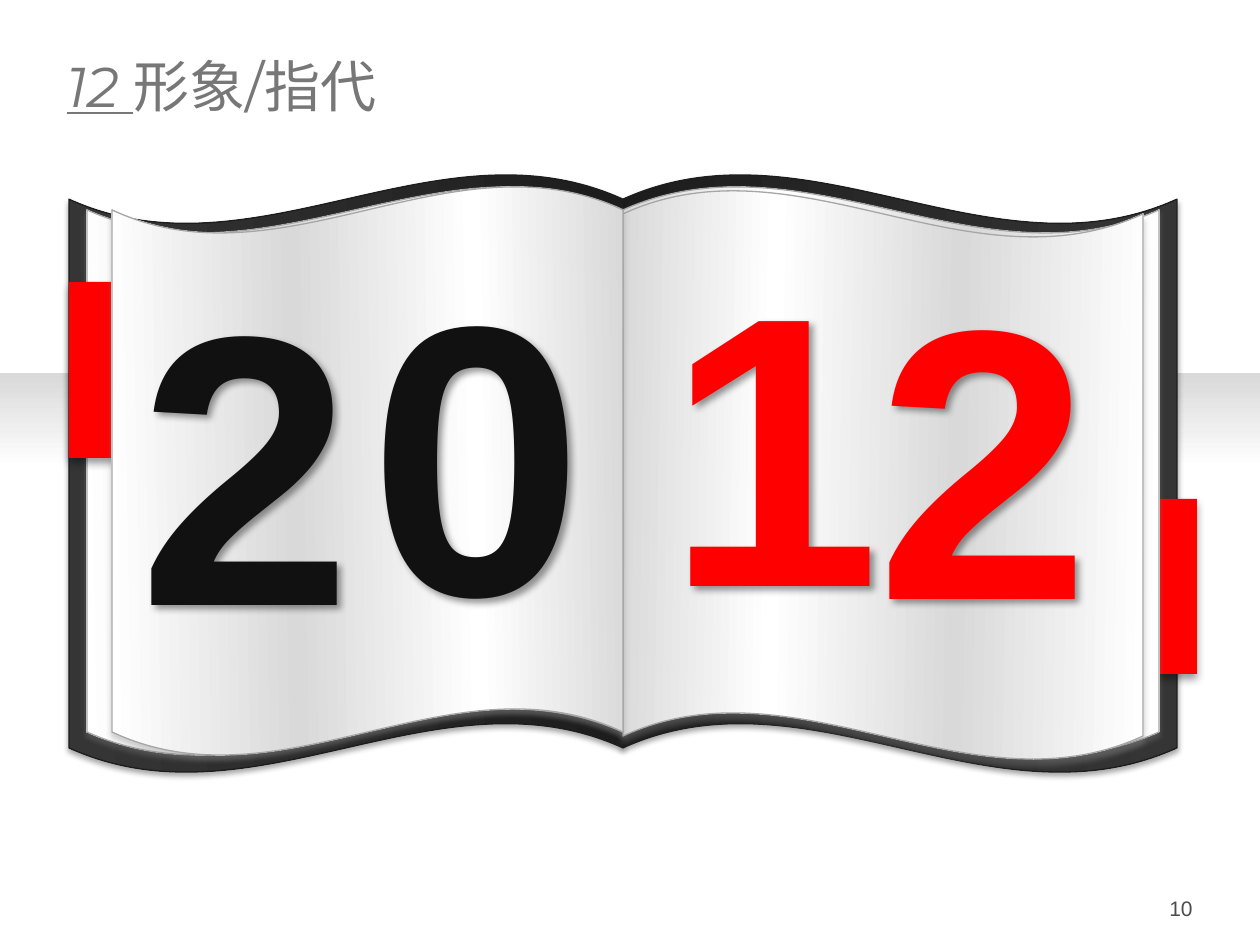
from lxml import etree
from pptx import Presentation
from pptx.dml.color import RGBColor
from pptx.enum.shapes import MSO_SHAPE
from pptx.enum.text import MSO_ANCHOR, PP_ALIGN
from pptx.oxml import parse_xml
from pptx.oxml.ns import nsdecls, qn
from pptx.util import Pt

RECT, WAVE = MSO_SHAPE.RECTANGLE, MSO_SHAPE.WAVE
LEFT, RIGHT = PP_ALIGN.LEFT, PP_ALIGN.RIGHT
TOP, MIDDLE = MSO_ANCHOR.TOP, MSO_ANCHOR.MIDDLE
PX = 914400 / 126
HEX = {
    "white": "FFFFFF", "shade": "D9D9D9", "edge": "A6A6A6", "dark": "1D1D1D",
    "cover": "353535", "red": "FF0000", "ink": "111111", "title": "777777",
    "number": "4C4C4C", "black": "000000", "gray": "808080",
}
PAGE = [(0, "shade"), (29, "white"), (64, "shade"), (100, "white")]
COVER = [(0, "dark"), (100, "cover")]
BAND = [(0, "shade"), (37, "white"), (100, "white")]


def draw(kind, box, fill, line=None, shade=None, angle=0, flip=False):
    """Add a shape; fill is a colour name or a list of gradient stops,
    shade is (colour, opacity %, blur pt, distance pt)."""
    shape = slide.shapes.add_shape(kind, *[round(n * PX) for n in box])
    shape.shadow.inherit = False
    props = shape._element.spPr
    if kind == WAVE:
        shape.adjustments[0] = 0.042
        shape.adjustments[1] = 0
    if flip:
        props.find(qn("a:xfrm")).set("flipH", "1")
    if isinstance(fill, str):
        shape.fill.solid()
        shape.fill.fore_color.rgb = RGBColor.from_string(HEX[fill])
    else:
        stops = "".join(f'<a:gs pos="{at * 1000}"><a:srgbClr val="{HEX[name]}"/></a:gs>'
                        for at, name in fill)
        props.find(qn("a:prstGeom")).addnext(parse_xml(
            f'<a:gradFill {nsdecls("a")} rotWithShape="1"><a:gsLst>{stops}</a:gsLst>'
            f'<a:lin ang="{angle * 60000}" scaled="0"/></a:gradFill>'))
    if line:
        shape.line.color.rgb = RGBColor.from_string(HEX[line])
        shape.line.width = Pt(0.75)
    else:
        shape.line.fill.background()
    if shade:
        cast(shape, *shade)


def cast(shape, name, alpha, blur, dist, angle=90):
    """Give a shape an outer shadow."""
    shape.shadow.inherit = False
    glow = etree.SubElement(
        shape._element.spPr.find(qn("a:effectLst")), qn("a:outerShdw"),
        blurRad=str(Pt(blur)), dist=str(Pt(dist)), dir=str(angle * 60000),
        algn="tl", rotWithShape="0")
    tone = etree.SubElement(glow, qn("a:srgbClr"), val=HEX[name])
    etree.SubElement(tone, qn("a:alpha"), val=str(alpha * 1000))


def write(box, runs, size, color, font="Arial", bold=False, align=LEFT,
          anchor=TOP, shape=None):
    """Write runs of (text, marked); a marked run is italic and underlined."""
    place = [round(n * PX) for n in box]
    if shape is None:
        shape = slide.shapes.add_textbox(*place)
    else:
        shape.left, shape.top, shape.width, shape.height = place
    frame = shape.text_frame
    frame.word_wrap = True
    frame.vertical_anchor = anchor
    para = frame.paragraphs[0]
    para.alignment = align
    for text, marked in runs:
        run = para.add_run()
        run.text = text
        run.font.name = font
        run.font.size = Pt(size)
        run.font.bold = bold
        run.font.italic = run.font.underline = marked
        run.font.color.rgb = RGBColor.from_string(HEX[color])
    return shape


deck = Presentation()
deck.slide_width, deck.slide_height = round(1260 * PX), round(945 * PX)
slide = deck.slides.add_slide(deck.slide_layouts[5])

draw(RECT, (0, 373, 1260, 256), BAND, angle=90)

# Book, from the cover up to the front pages
spine = 623
tab = ("black", 40, 5, 3)
for x, flip in ((spine, False), (69, True)):
    draw(WAVE, (x, 174, 554, 599), COVER, "dark", ("black", 35, 3.1, 1.8), flip=flip)
draw(RECT, (1138, 499, 59, 175), "red", shade=tab)
for wide, top, drop, flip in ((536, 186, 1.8, True), (536, 186, 1.8, False),
                              (520, 190, 3.8, False)):
    x = spine - wide if flip else spine
    draw(WAVE, (x, top, wide, 570), PAGE, "edge", ("gray", 35, 3.1, drop), 1, flip)
draw(RECT, (69, 282, 59, 176), "red", shade=tab)
draw(WAVE, (112, 186, 511, 570), PAGE, "edge", ("gray", 35, 3.1, 2.8), 1, True)

# Year
for digit, x, y, color in (("2", 126, 214, "ink"), ("0", 357, 204, "ink"),
                           ("1", 654, 195, "red"), ("2", 864, 208, "red")):
    box = write((x, y, 181, 479), [(digit, False)], 220, color, bold=True)
    cast(box, "black", 40, 4, 3, 45)

write((54, 35, 1152, 100), [("12 ", True), ("形象/指代", False)], 32, "title",
      font="Montserrat", anchor=MIDDLE, shape=slide.shapes.title)
write((911, 890, 294, 37), [("10", False)], 12, "number", align=RIGHT, anchor=MIDDLE)

deck.save("out.pptx")
